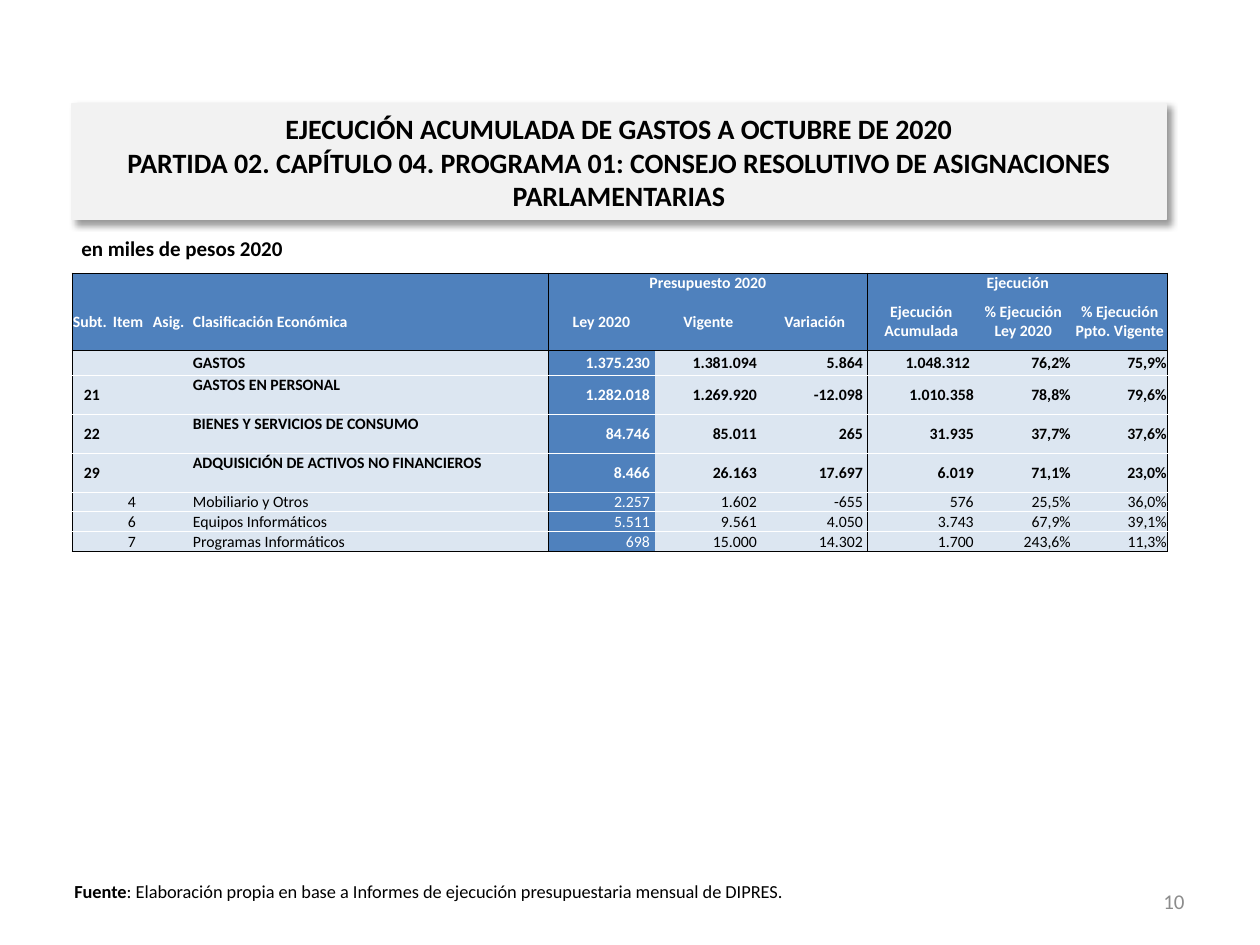
from typing import NamedTuple

from lxml.etree import SubElement
from pptx import Presentation
from pptx.dml.color import RGBColor
from pptx.enum.shapes import MSO_SHAPE
from pptx.enum.text import MSO_ANCHOR as Anchor, PP_ALIGN as Align
from pptx.oxml.ns import qn
from pptx.util import Emu, Pt

PX = 914400 // 126
FONT = "Calibri"
BLACK = RGBColor(0, 0, 0)
WHITE = RGBColor(255, 255, 255)
GRAY = RGBColor(0x8C, 0x8C, 0x8C)
PANEL = RGBColor(0xF2, 0xF2, 0xF2)
BLUE = RGBColor(0x4F, 0x81, 0xBD)
PALE = RGBColor(0xDC, 0xE6, 0xF1)

NAME, LAW, VARIATION, SPENT = 3, 4, 6, 7
LEFT_EDGES, RIGHT_EDGES = (0, LAW, SPENT), (NAME, VARIATION, 9)
TOTAL_ROW = 2
COLUMN_WIDTHS = [40, 40, 40, 356, 107, 107, 106, 107, 97, 96]
ROW_HEIGHTS = [20, 57, 25, 39, 39, 39, 20, 20, 20]
GROUPS = {LAW: "Presupuesto 2020", SPENT: "Ejecución"}
HEADINGS = ["Subt.", "Item", "Asig.", "Clasificación Económica", "Ley 2020", "Vigente",
            "Variación", "Ejecución Acumulada", "% Ejecución Ley 2020",
            "% Ejecución Ppto. Vigente"]


class Box(NamedTuple):
    left: int
    top: int
    width: int
    height: int

    def emu(self) -> list[Emu]:
        return [Emu(length * PX) for length in self]


class Expense(NamedTuple):
    subtitle: str
    item: str
    name: str
    amounts: str

    def cells(self) -> list[str]:
        return [self.subtitle, self.item, "", self.name, *self.amounts.split()]

    def is_bold(self) -> bool:
        return not self.item


EXPENSES = [
    Expense("", "", "GASTOS", "1.375.230 1.381.094 5.864 1.048.312 76,2% 75,9%"),
    Expense("21", "", "GASTOS EN PERSONAL",
            "1.282.018 1.269.920 -12.098 1.010.358 78,8% 79,6%"),
    Expense("22", "", "BIENES Y SERVICIOS DE CONSUMO",
            "84.746 85.011 265 31.935 37,7% 37,6%"),
    Expense("29", "", "ADQUISICIÓN DE ACTIVOS NO FINANCIEROS",
            "8.466 26.163 17.697 6.019 71,1% 23,0%"),
    Expense("", "4", "Mobiliario y Otros", "2.257 1.602 -655 576 25,5% 36,0%"),
    Expense("", "6", "Equipos Informáticos", "5.511 9.561 4.050 3.743 67,9% 39,1%"),
    Expense("", "7", "Programas Informáticos", "698 15.000 14.302 1.700 243,6% 11,3%"),
]


def write(frame, text: str, *, size: float, color=BLACK, bold=False, align=Align.LEFT,
          lead: str = "") -> None:
    """Fill the frame's first paragraph, with an optional bold lead before the text."""
    para = frame.paragraphs[0]
    para.alignment = align
    for part, heavy in ((lead, True), (text, bold)):
        for index, line in enumerate(part.split("\n") if part else []):
            if index:
                para.add_line_break()
            span = para.add_run()
            span.text = line
            span.font.name, span.font.size, span.font.bold = FONT, Pt(size), heavy
            span.font.color.rgb = color
    if not (lead or text):
        SubElement(para._p, qn("a:endParaRPr"), sz=str(int(size * 100)))


def add_text(page, box: Box, text: str, *, anchor=Anchor.TOP, **style) -> None:
    frame = page.shapes.add_textbox(*box.emu()).text_frame
    frame.word_wrap = True
    frame.vertical_anchor = anchor
    write(frame, text, **style)


def add_title(page, box: Box, text: str) -> None:
    panel = page.shapes.add_shape(MSO_SHAPE.RECTANGLE, *box.emu())
    panel.fill.solid()
    panel.fill.fore_color.rgb = PANEL
    panel.line.color.rgb = PANEL
    panel.line.width = Pt(0.75)
    panel.shadow.inherit = False
    effects = panel._element.spPr.find(qn("a:effectLst"))
    shadow = SubElement(effects, qn("a:outerShdw"), blurRad=str(Pt(4)), dist=str(Pt(3)),
                        dir="2700000", algn="tl", rotWithShape="0")
    tint = SubElement(shadow, qn("a:srgbClr"), val=str(BLACK))
    SubElement(tint, qn("a:alpha"), val="40000")
    panel.text_frame.word_wrap = True
    panel.text_frame.vertical_anchor = Anchor.MIDDLE
    write(panel.text_frame, text, size=16, bold=True, align=Align.CENTER)


def set_borders(cell, row: int, column: int) -> None:
    """Black around each block of columns, white between body rows."""
    between = WHITE if row >= TOTAL_ROW else None
    last_column = column + cell.span_width - 1
    sides = {
        "a:lnL": BLACK if column in LEFT_EDGES else None,
        "a:lnR": BLACK if last_column in RIGHT_EDGES else None,
        "a:lnT": BLACK if row in (0, TOTAL_ROW) else between,
        "a:lnB": BLACK if row in (TOTAL_ROW - 1, len(ROW_HEIGHTS) - 1) else between,
    }
    properties = cell._tc.get_or_add_tcPr()
    for tag, color in sides.items():
        line = SubElement(properties, qn(tag), w=str(Pt(0.5)))
        if color is None:
            SubElement(line, qn("a:noFill"))
        else:
            fill = SubElement(line, qn("a:solidFill"))
            SubElement(fill, qn("a:srgbClr"), val=str(color))


def cell_align(row: int, column: int):
    if row < TOTAL_ROW:
        return Align.LEFT if column <= NAME else Align.CENTER
    if column == NAME:
        return Align.JUSTIFY
    return Align.CENTER if column < NAME else Align.RIGHT


def format_cell(cell, row: int, column: int, text: str, bold: bool) -> None:
    body = row >= TOTAL_ROW
    set_borders(cell, row, column)
    cell.fill.solid()
    cell.fill.fore_color.rgb = PALE if body and column != LAW else BLUE
    padded = body and (LAW <= column <= VARIATION or (row, column) == (TOTAL_ROW, SPENT))
    cell.margin_left = cell.margin_top = Emu(PX)
    cell.margin_right = Emu((5 if padded else 1) * PX)
    cell.margin_bottom = 0
    cell.vertical_anchor = Anchor.MIDDLE
    if row == 0:
        cell.vertical_anchor = Anchor.BOTTOM
    elif row > TOTAL_ROW and column == NAME:
        cell.vertical_anchor = Anchor.TOP
    write(cell.text_frame, text, size=9, bold=bold, align=cell_align(row, column),
          color=BLACK if body and column != LAW else WHITE)


def add_budget_table(page, left: int, top: int) -> None:
    box = Box(left, top, sum(COLUMN_WIDTHS), sum(ROW_HEIGHTS))
    table = page.shapes.add_table(len(ROW_HEIGHTS), len(COLUMN_WIDTHS), *box.emu()).table
    table.first_row = table.horz_banding = False
    for column, width in zip(table.columns, COLUMN_WIDTHS):
        column.width = Emu(width * PX)
    for row, height in zip(table.rows, ROW_HEIGHTS):
        row.height = Emu(height * PX)
    for column in GROUPS:
        table.cell(0, column).merge(table.cell(0, column + 2))
    group_row = [GROUPS.get(column, "") for column in range(len(COLUMN_WIDTHS))]
    lines = [(group_row, True), (HEADINGS, True)]
    lines += [(expense.cells(), expense.is_bold()) for expense in EXPENSES]
    for row, (texts, bold) in enumerate(lines):
        for column, text in enumerate(texts):
            format_cell(table.cell(row, column), row, column, text, bold)


def main() -> None:
    deck = Presentation()
    deck.slide_width, deck.slide_height = Emu(1260 * PX), Emu(945 * PX)
    page = deck.slides.add_slide(deck.slide_layouts[6])
    add_title(page, Box(72, 104, 1094, 116),
              "EJECUCIÓN ACUMULADA DE GASTOS A OCTUBRE DE 2020\n"
              "PARTIDA 02. CAPÍTULO 04. PROGRAMA 01: CONSEJO RESOLUTIVO DE ASIGNACIONES "
              "PARLAMENTARIAS")
    add_text(page, Box(903, 876, 294, 50), "10", size=12, color=GRAY, align=Align.RIGHT,
             anchor=Anchor.MIDDLE)
    add_text(page, Box(69, 229, 1096, 44), "en miles de pesos 2020", size=12, bold=True)
    add_text(page, Box(62, 874, 1134, 50), ": Elaboración propia en base a Informes de "
             "ejecución presupuestaria mensual de DIPRES.", size=10.5, lead="Fuente")
    add_budget_table(page, 72, 273)
    deck.save("out.pptx")


if __name__ == "__main__":
    main()
